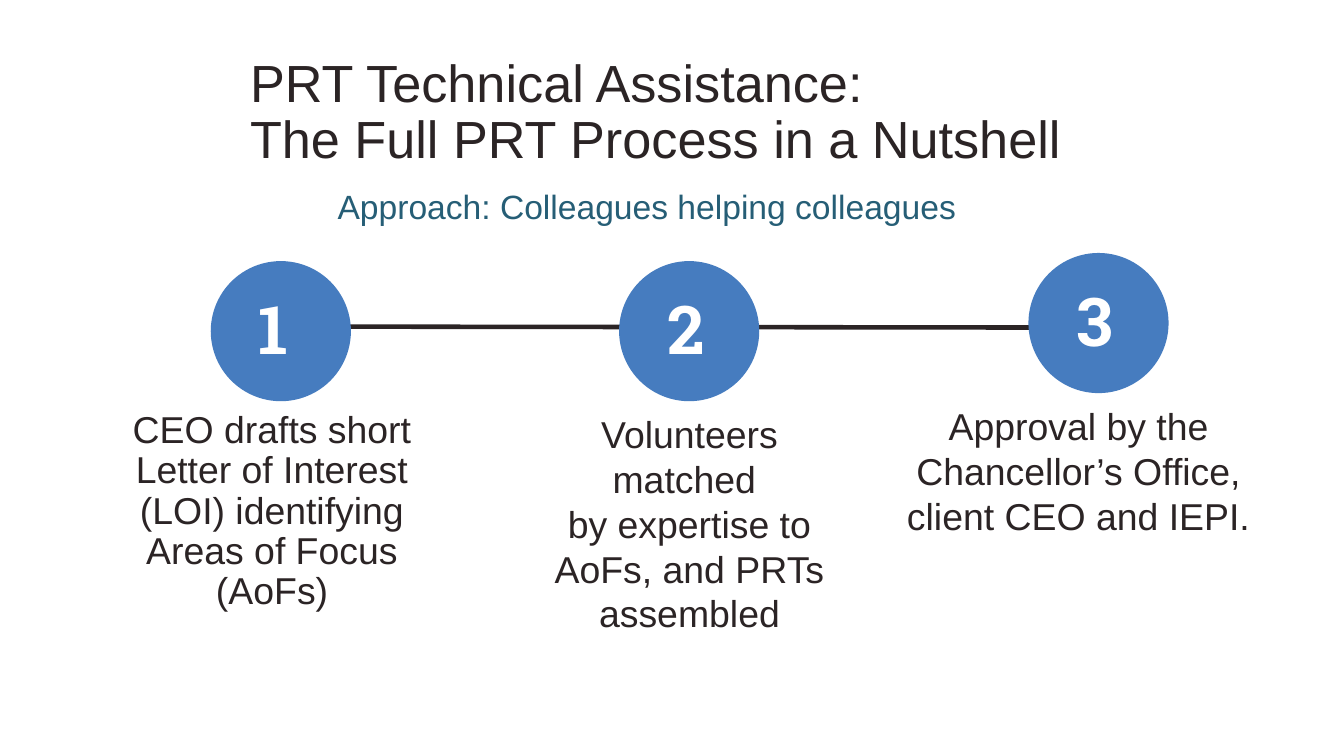
from pptx import Presentation
from pptx.dml.color import RGBColor
from pptx.enum.shapes import MSO_CONNECTOR as CONN, MSO_SHAPE as SHAPE
from pptx.enum.text import MSO_ANCHOR as ANCHOR, PP_ALIGN as ALIGN
from pptx.oxml.ns import qn
from pptx.util import Inches, Pt
from lxml.etree import SubElement

INK, TEAL, BLUE, WHITE = "2B2425", "265E76", "467CBF", "FFFFFF"
DIAMETER = 1.39
STEPS = [
    (2.09, 2.59, 0.83, 3.74, 2.59, 0.9,
     "CEO drafts short Letter of Interest (LOI) identifying Areas of Focus (AoFs)"),
    (6.14, 2.59, 5.35, 2.98, 2.46, None,
     "Volunteers matched \vby expertise to AoFs, and PRTs assembled"),
    (10.2, 2.51, 8.83, 3.74, 2.12, None,
     "Approval by the Chancellor’s Office, client CEO and IEPI."),
]


def rgb(value):
    return RGBColor.from_string(value)


def add_text(s, text, x, y, w, h, size, color=INK, font="Arial", bold=False,
             align=ALIGN.LEFT, anchor=ANCHOR.TOP, spacing=None, inset=(0.13, 0.13)):
    tf = s.shapes.add_textbox(Inches(x), Inches(y), Inches(w), Inches(h)).text_frame
    tf.word_wrap = True
    tf.vertical_anchor = anchor
    tf.margin_left = tf.margin_right = Inches(inset[0])
    tf.margin_top = tf.margin_bottom = Inches(inset[1])
    p = tf.paragraphs[0]
    p.text = text
    p.alignment = align
    if spacing:
        p.line_spacing = spacing
    for r in p.runs:
        r.font.name = font
        r.font.size = Pt(size)
        r.font.bold = bold
        r.font.color.rgb = rgb(color)


def add_heading(s, x, y):
    add_text(s, "PRT Technical Assistance: \vThe Full PRT Process in a Nutshell",
             x, y, 10.98, 1.45, 37.3, anchor=ANCHOR.MIDDLE, spacing=0.9)
    add_text(s, "Approach: Colleagues helping colleagues",
             x - 0.3, y + 1.25, 8.73, 0.73, 24, color=TEAL,
             align=ALIGN.CENTER, spacing=1.15)


def add_track(s, x1, y1, x2, y2):
    line = s.shapes.add_connector(CONN.STRAIGHT, Inches(x1), Inches(y1),
                                  Inches(x2), Inches(y2))
    line.line.color.rgb = rgb(INK)
    line.line.width = Pt(3.25)
    SubElement(line._element.spPr, qn("a:effectLst"))


def add_step(s, number, x, y, caption_x, caption_w, caption_h, spacing, caption):
    sp = s.shapes.add_shape(SHAPE.OVAL, Inches(x), Inches(y),
                            Inches(DIAMETER), Inches(DIAMETER))
    sp.shadow.inherit = False
    sp.fill.solid()
    sp.fill.fore_color.rgb = rgb(BLUE)
    sp.line.fill.background()
    add_text(s, str(number), x + 0.38, y + 0.21, 0.8, 0.91, 48, color=WHITE,
             font="Roboto Slab", bold=True, inset=(0.1, 0.05))
    add_text(s, caption, caption_x, y + DIAMETER + 0.03, caption_w, caption_h, 26.7,
             align=ALIGN.CENTER, spacing=spacing, inset=(0.13, 0.07))


def main():
    prs = Presentation()
    prs.slide_width, prs.slide_height = Inches(13.33), Inches(7.5)
    s = prs.slides.add_slide(prs.slide_layouts[6])
    add_heading(s, 2.35, 0.4)
    add_track(s, 2.94, 3.24, 10.78, 3.25)
    for number, step in enumerate(STEPS, 1):
        add_step(s, number, *step)
    prs.save("out.pptx")


if __name__ == "__main__":
    main()
